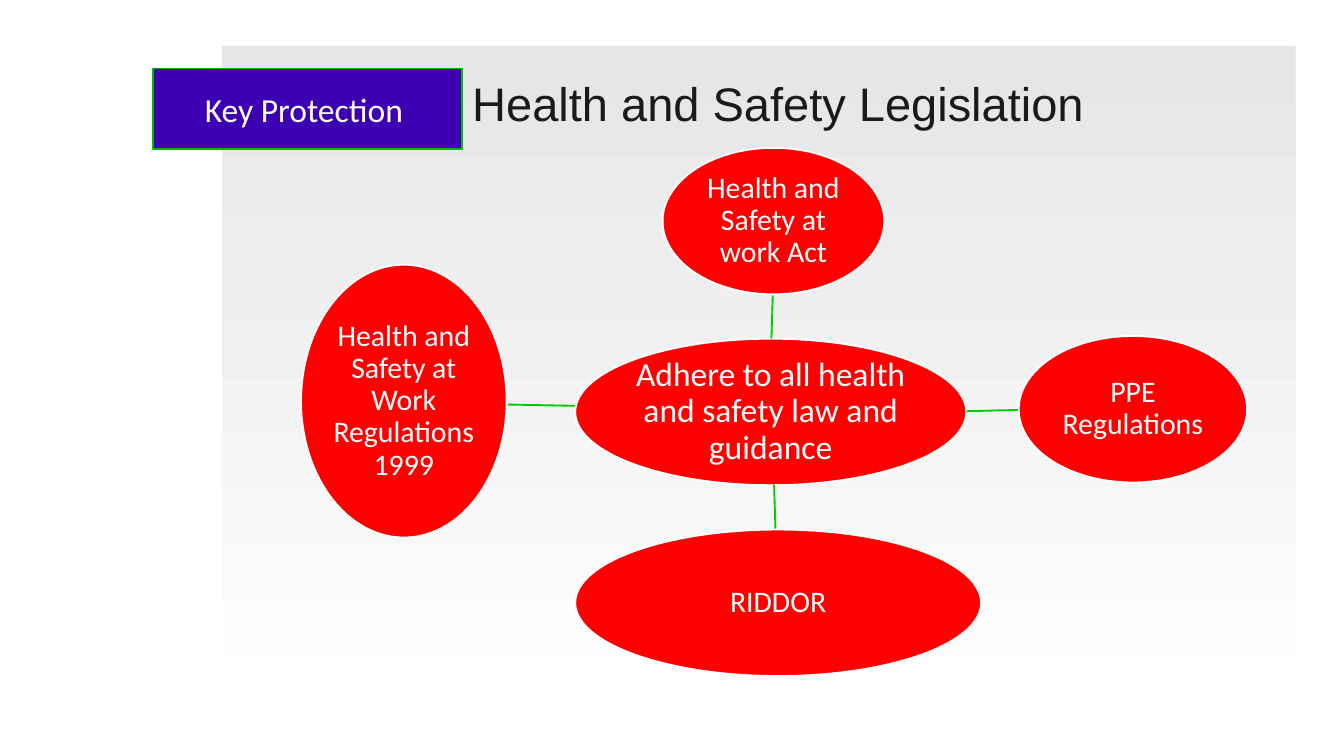
from pptx import Presentation
from pptx.dml.color import RGBColor
from pptx.enum.shapes import MSO_CONNECTOR as Link, MSO_SHAPE as Kind
from pptx.enum.text import MSO_ANCHOR as Anchor, MSO_AUTO_SIZE as Fit, PP_ALIGN as Align
from pptx.util import Inches, Pt
from lxml.etree import SubElement
from pptx.oxml.ns import qn

HUB = ("Adhere to all health and safety law and guidance", 18, (4.28, 2.52, 2.91, 1.09))
NODES = [
    ("Health and Safety at work Act", (4.93, 1.1, 1.65, 1.09), (5.74, 2.52, 5.75, 2.19)),
    ("PPE Regulations", (7.58, 2.5, 1.7, 1.09), (7.19, 3.06, 7.58, 3.05)),
    ("RIDDOR", (4.28, 3.94, 3.02, 1.09), (5.76, 3.61, 5.77, 3.94)),
    ("Health and Safety at Work Regulations 1999", (2.24, 1.97, 1.53, 2.03),
     (4.28, 3.02, 3.77, 3.01)),
]


def color(code):
    """Turn a hex string into a colour."""
    return RGBColor.from_string(code)


def write(frame, text, size, font="Calibri", ink="FFFFFF", inset=0.01, space=0.9,
          anchor=Anchor.MIDDLE):
    """Write one centred run into a text frame."""
    frame.word_wrap = True
    frame.auto_size = Fit.NONE
    frame.vertical_anchor = anchor
    frame.margin_left = frame.margin_right = Inches(inset)
    frame.margin_top = frame.margin_bottom = Inches(inset)
    para = frame.paragraphs[0]
    para.alignment = Align.CENTER
    para.line_spacing = space
    run = para.add_run()
    run.text = text
    run.font.size = Pt(size)
    run.font.name = font
    run.font.color.rgb = color(ink)


def add_box(slide, kind, area, fill, edge):
    """Add a filled and outlined preset shape."""
    shape = slide.shapes.add_shape(kind, *map(Inches, area))
    shape.shadow.inherit = False
    shape.fill.solid()
    shape.fill.fore_color.rgb = color(fill)
    shape.line.color.rgb = color(edge)
    shape.line.width = Pt(1)
    return shape


def add_oval(slide, text, size, area):
    """Add a red oval with its label."""
    oval = add_box(slide, Kind.OVAL, area, "FF0000", "FFFFFF")
    write(oval.text_frame, text, size)


def add_spoke(slide, ends):
    """Add a green line from the hub to a node."""
    line = slide.shapes.add_connector(Link.STRAIGHT, *map(Inches, ends))
    line.line.color.rgb = color("00CC00")
    line.line.width = Pt(1)
    SubElement(line.element.spPr, qn("a:effectLst"))


def add_panel(slide):
    """Add the grey gradient panel behind the title."""
    panel = slide.shapes.add_shape(Kind.RECTANGLE, *map(Inches, (1.65, 0.34, 7.99, 4.96)))
    panel.shadow.inherit = False
    panel.line.fill.background()
    panel.fill.gradient()
    panel.fill.gradient_angle = 270
    for stop, code in zip(panel.fill.gradient_stops, ("E6E6E6", "FFFFFF")):
        stop.color.rgb = color(code)
    slide.shapes.title.element.addprevious(panel.element)


def set_title(slide, text):
    """Place and fill the title."""
    title = slide.shapes.title
    title.left, title.top, title.width, title.height = map(Inches, (2.25, 0.65, 7.08, 0.33))
    write(title.text_frame, text, 25.2, "Arial", "1A1A1A", 0, anchor=Anchor.BOTTOM)


def main():
    """Build and save the slide."""
    deck = Presentation()
    deck.slide_width = Inches(10)
    deck.slide_height = deck.slide_width * 9 // 16
    slide = deck.slides.add_slide(deck.slide_layouts[5])
    add_panel(slide)
    set_title(slide, "Health and Safety Legislation")
    add_oval(slide, *HUB)
    for text, area, ends in NODES:
        add_spoke(slide, ends)
        add_oval(slide, text, 16, area)
    tag = add_box(slide, Kind.RECTANGLE, (1.14, 0.51, 2.3, 0.6), "3C00B2", "00BD00")
    write(tag.text_frame, "Key Protection ", 18, inset=0.05, space=1.0)
    deck.save("out.pptx")


if __name__ == "__main__":
    main()
